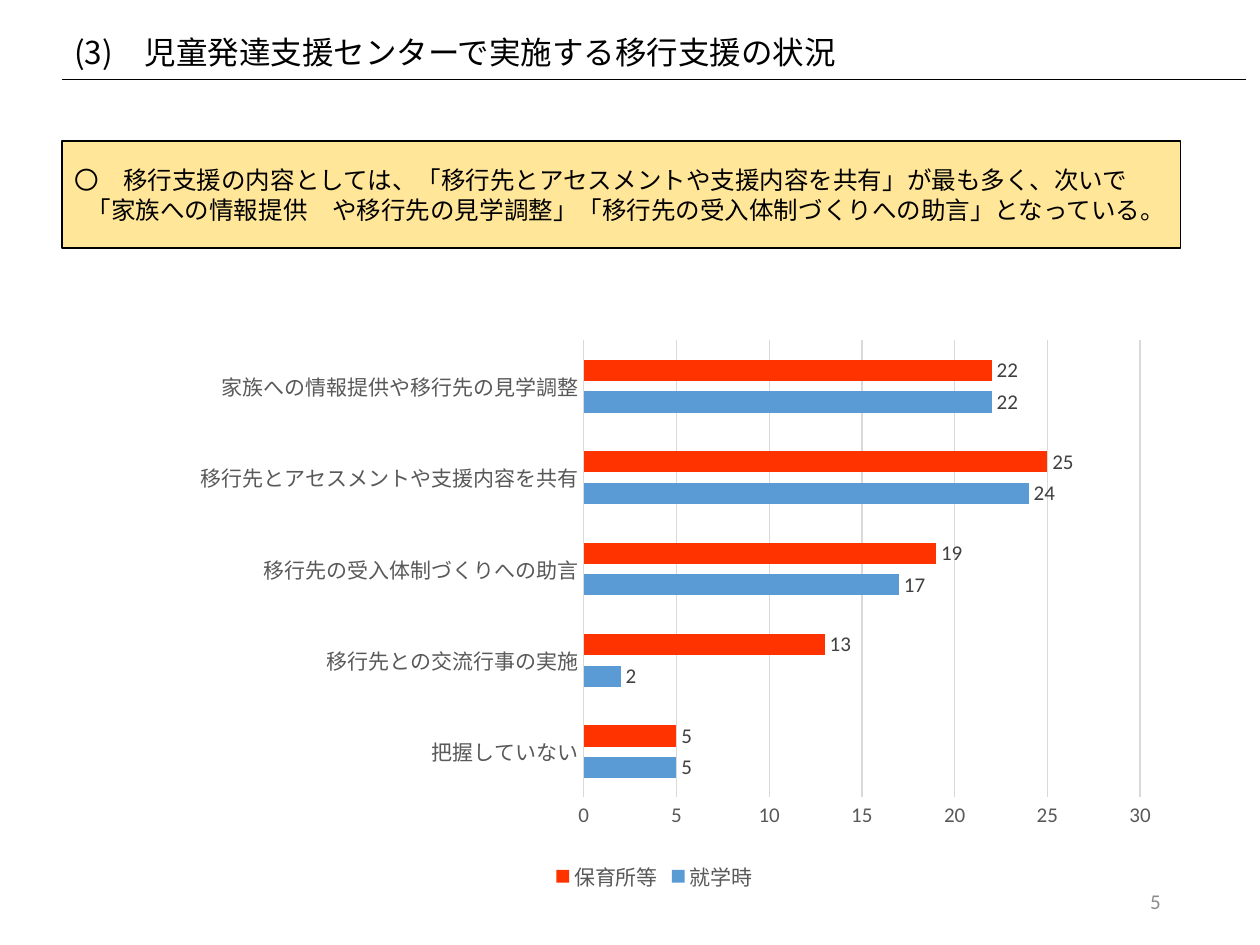
from lxml.etree import SubElement
from pptx import Presentation
from pptx.chart.data import CategoryChartData
from pptx.dml.color import RGBColor
from pptx.enum.chart import XL_CHART_TYPE as ChartType, XL_LABEL_POSITION as LabelPos
from pptx.enum.chart import XL_LEGEND_POSITION as LegendPos, XL_TICK_MARK as TickMark
from pptx.enum.shapes import MSO_SHAPE as Shape
from pptx.enum.text import MSO_ANCHOR as Anchor, PP_ALIGN as Align
from pptx.oxml import parse_xml
from pptx.oxml.ns import qn
from pptx.util import Inches, Pt

JAPANESE, LATIN = "Noto Sans CJK JP", "Calibri"
NO_STYLE = "{2D5ABB26-0587-4C30-8999-92F81FD0307C}"
GRAY, GRID = "595959", "D9D9D9"

TITLE = "(3)　児童発達支援センターで実施する移行支援の状況"
SUMMARY = (
    "〇　移行支援の内容としては、「移行先とアセスメントや支援内容を共有」が最も多く、次いで"
    "「家族への情報提供　や移行先の見学調整」「移行先の受入体制づくりへの助言」となっている。"
)
CATEGORIES = [
    "把握していない",
    "移行先との交流行事の実施",
    "移行先の受入体制づくりへの助言",
    "移行先とアセスメントや支援内容を共有",
    "家族への情報提供や移行先の見学調整",
]
SERIES = [
    ("就学時", [5, 2, 17, 24, 22], "5B9BD5"),
    ("保育所等", [5, 13, 19, 25, 22], "FF3300"),
]


def rgb(value):
    return RGBColor.from_string(value)


def box(left, top, width, height):
    return Inches(left), Inches(top), Inches(width), Inches(height)


def style_font(font, size, color, name=LATIN):
    font.size = Pt(size)
    font.name = name
    font.color.rgb = rgb(color)


def write(frame, text, size, color, name):
    """Fill a text frame with one paragraph and return that paragraph."""
    frame.word_wrap = True
    paragraph = frame.paragraphs[0]
    paragraph.text = text
    style_font(paragraph.font, size, color, name)
    for run in paragraph.runs:
        SubElement(run.font._element, qn("a:ea"), typeface=name)
    return paragraph


def add_title(slide):
    """Add the one-cell table whose bottom border underlines the title."""
    table = slide.shapes.add_table(1, 1, *box(0.49, 0.17, 9.4, 0.45)).table
    table.first_row = table.horz_banding = False
    table._tbl.tblPr.find(qn("a:tableStyleId")).text = NO_STYLE
    cell = table.cell(0, 0)
    cell.vertical_anchor = Anchor.MIDDLE
    write(cell.text_frame, TITLE, 18, "000000", JAPANESE)
    properties = cell._tc.get_or_add_tcPr()
    border = SubElement(properties, qn("a:lnB"), w=str(Pt(1)))
    fill = SubElement(border, qn("a:solidFill"))
    SubElement(fill, qn("a:srgbClr"), val="000000")
    cell.fill.background()


def add_summary(slide):
    panel = slide.shapes.add_shape(Shape.RECTANGLE, *box(0.49, 1.12, 8.88, 0.85))
    panel.shadow.inherit = False
    panel.fill.solid()
    panel.fill.fore_color.rgb = rgb("FFE699")
    panel.line.color.rgb = rgb("000000")
    panel.line.width = Pt(1)
    panel.text_frame.vertical_anchor = Anchor.MIDDLE
    paragraph = write(panel.text_frame, SUMMARY, 14, "000000", JAPANESE)
    paragraph.alignment = Align.LEFT
    indent = paragraph._p.get_or_add_pPr()
    indent.set("marL", str(Inches(0.1)))
    indent.set("indent", str(-Inches(0.1)))


def style_axis(axis):
    axis.major_tick_mark = axis.minor_tick_mark = TickMark.NONE
    style_font(axis.tick_labels.font, 12, GRAY)


def set_plot_area(chart, x, y, w, h):
    """Place the inner plot area, as fractions of the chart."""
    plot_area = chart._chartSpace.chart.plotArea
    for layout in plot_area.findall(qn("c:layout")):
        plot_area.remove(layout)
    sizes = "".join(
        f'<c:{tag} val="{value}"/>' for tag, value in zip("xywh", (x, y, w, h))
    )
    plot_area.insert(0, parse_xml(
        '<c:layout xmlns:c="http://schemas.openxmlformats.org/drawingml/2006/chart">'
        '<c:manualLayout><c:layoutTarget val="inner"/>'
        '<c:xMode val="edge"/><c:yMode val="edge"/>'
        f"{sizes}</c:manualLayout></c:layout>"
    ))


def add_support_chart(slide):
    data = CategoryChartData()
    data.categories = CATEGORIES
    for name, values, _ in SERIES:
        data.add_series(name, values)
    chart = slide.shapes.add_chart(
        ChartType.BAR_CLUSTERED, *box(1.18, 2.47, 8.03, 4.65), data
    ).chart
    style_font(chart.font, 10, "000000")
    chart.has_title = False
    set_plot_area(chart, 0.43, 0.05, 0.55, 0.78)

    chart.has_legend = True
    chart.legend.position = LegendPos.BOTTOM
    chart.legend.include_in_layout = False
    style_font(chart.legend.font, 12, GRAY)

    categories, counts = chart.category_axis, chart.value_axis
    style_axis(categories)
    style_axis(counts)
    counts.minimum_scale, counts.maximum_scale, counts.major_unit = 0, 30, 5
    counts.format.line.fill.background()
    for line in (categories.format.line, counts.major_gridlines.format.line):
        line.color.rgb = rgb(GRID)
        line.width = Pt(0.75)

    plot = chart.plots[0]
    plot.vary_by_categories = False
    plot.gap_width, plot.overlap = 182, -49
    for series, (_, _, color) in zip(plot.series, SERIES):
        series.format.fill.solid()
        series.format.fill.fore_color.rgb = rgb(color)
        labels = series.data_labels
        labels.show_value = True
        labels.position = LabelPos.OUTSIDE_END
        style_font(labels.font, 12, "404040")


def add_page_number(slide):
    frame = slide.shapes.add_textbox(*box(7.06, 6.95, 2.25, 0.4)).text_frame
    frame.vertical_anchor = Anchor.MIDDLE
    write(frame, "5", 12, "8C8C8C", LATIN).alignment = Align.RIGHT


def main():
    deck = Presentation()
    deck.slide_width, deck.slide_height = Inches(10), Inches(7.5)
    slide = deck.slides.add_slide(deck.slide_layouts[6])
    add_title(slide)
    add_summary(slide)
    add_support_chart(slide)
    add_page_number(slide)
    deck.save("out.pptx")


if __name__ == "__main__":
    main()
